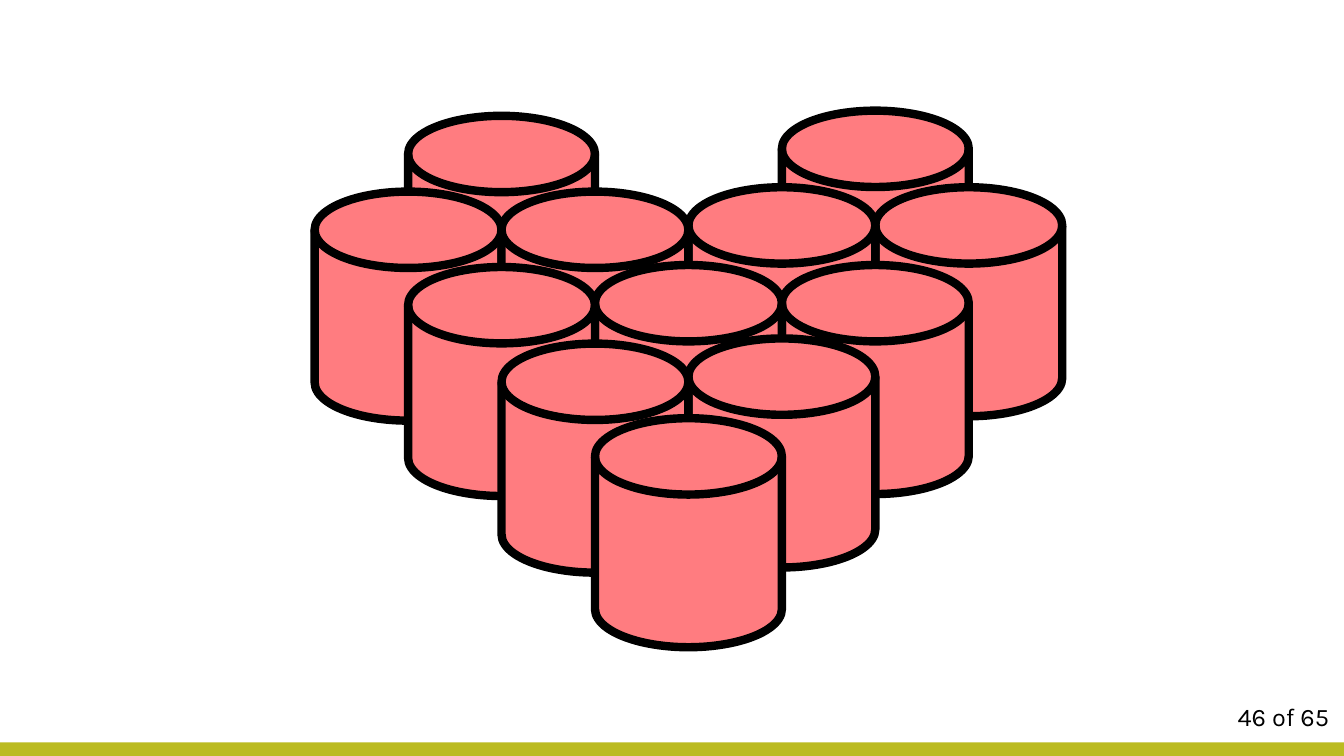
from pptx import Presentation
from pptx.dml.color import RGBColor
from pptx.enum.shapes import MSO_SHAPE as Shape
from pptx.enum.text import MSO_AUTO_SIZE as AutoSize
from pptx.util import Cm, Pt

COLOURS = {"cylinder": "FF7C80", "outline": "000000", "footer": "BBBB21", "text": "000000"}
PAGE_LABEL = "46 of 65"
CYLINDERS = [
    (5, 2.79), (1, 2.92),
    (6, 4.72), (0, 4.83), (4, 4.72),
    (5, 6.68), (2, 4.83), (3, 6.68), (1, 6.73),
    (4, 8.53), (2, 8.66),
    (3, 10.54),
]

SLIDE_WIDTH, SLIDE_HEIGHT = 33.87, 19.05
FOOTER_HEIGHT = 0.34
FIRST_LEFT = 7.93
CYLINDER_WIDTH, CYLINDER_HEIGHT = 4.71, 5.77
COLUMN_STEP = CYLINDER_WIDTH / 2


def colour(name):
    return RGBColor.from_string(COLOURS[name])


def add_filled(page, kind, left, top, width, height, fill):
    shape = page.shapes.add_shape(kind, Cm(left), Cm(top), Cm(width), Cm(height))
    shape.shadow.inherit = False
    shape.fill.solid()
    shape.fill.fore_color.rgb = colour(fill)
    shape.line.fill.background()
    return shape


def add_cylinder(page, column, top):
    left = FIRST_LEFT + column * COLUMN_STEP
    cylinder = add_filled(page, Shape.FLOWCHART_MAGNETIC_DISK, left, top,
                          CYLINDER_WIDTH, CYLINDER_HEIGHT, "cylinder")
    cylinder.line.color.rgb = colour("outline")
    cylinder.line.width = Pt(6)


def add_page_label(page):
    box = page.shapes.add_textbox(Cm(30.94), Cm(17.55), Cm(3.07), Cm(1.03))
    frame = box.text_frame
    frame.word_wrap = True
    frame.auto_size = AutoSize.SHAPE_TO_FIT_TEXT
    para = frame.paragraphs[0]
    para.text = PAGE_LABEL
    para.font.name = "Karla"
    para.font.size = Pt(18)
    para.font.color.rgb = colour("text")


def main():
    deck = Presentation()
    deck.slide_width, deck.slide_height = Cm(SLIDE_WIDTH), Cm(SLIDE_HEIGHT)
    page = deck.slides.add_slide(deck.slide_layouts.get_by_name("Blank"))
    add_filled(page, Shape.RECTANGLE, 0, SLIDE_HEIGHT - FOOTER_HEIGHT,
               SLIDE_WIDTH, FOOTER_HEIGHT, "footer")
    add_page_label(page)
    for column, top in CYLINDERS:
        add_cylinder(page, column, top)
    deck.save("out.pptx")


if __name__ == "__main__":
    main()
